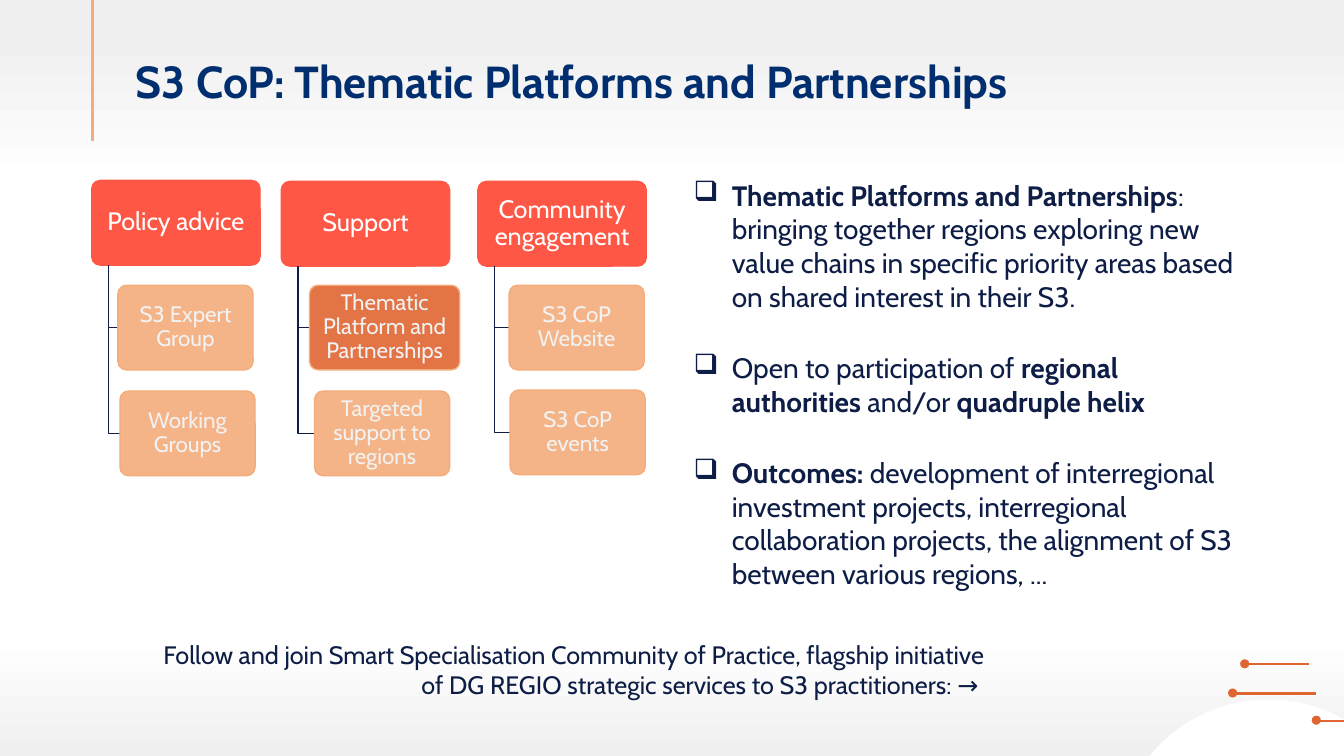
from copy import deepcopy

from lxml import etree
from pptx import Presentation
from pptx import util as u
from pptx.dml.color import RGBColor
from pptx.enum import shapes, text
from pptx.oxml.ns import qn

FONT = "Cabin"
NAVY, TITLE_BLUE, RED = "0D1D46", "002E6E", "FE5745"
PEACH, ORANGE, WHITE, PALE = "F4AC7A", "DF6532", "FFFFFF", "F2F2F2"
BACKGROUND_STOPS = [(5, "F0F0F0"), (24, WHITE), (84, WHITE), (100, "F0F0F0")]
CARD_HEIGHT, HEAD_WIDTH = 0.84, 1.67

# heading, left, top, then cards as (label, left, top, width, fill)
COLUMNS = [
    ("Policy advice", 0.91, 1.79, [
        ("S3 Expert Group", 1.17, 2.83, 1.34, PEACH),
        ("Working Groups", 1.19, 3.88, 1.34, PEACH)]),
    ("Support", 2.79, 1.8, [
        ("Thematic Platform and Partnerships", 3.07, 2.83, 1.49, ORANGE),
        ("Targeted support to regions", 3.12, 3.88, 1.34, PEACH)]),
    ("Community engagement", 4.74, 1.8, [
        ("S3 CoP Website", 5.05, 2.83, 1.34, PEACH),
        ("S3 CoP events", 5.06, 3.87, 1.34, PEACH)]),
]

# each point is a list of (text, bold) runs
POINTS = [
    [("Thematic Platforms and Partnerships", True),
     (": bringing together regions exploring new value chains in specific priority "
      "areas based on shared interest in their S3.", False)],
    [("Open to participation of ", False), ("regional authorities ", True),
     ("and/or ", False), ("quadruple helix", True)],
    [("Outcomes: ", True),
     ("development of interregional investment projects, interregional collaboration "
      "projects, the alignment of S3 between various regions, ...", False)],
]

FOLLOW_LINES = [
    "Follow and join Smart Specialisation Community of Practice, flagship initiative",
    "of DG REGIO strategic services to S3 practitioners: → ",
]


def rgb(value):
    return RGBColor.from_string(value)


def set_attributes(target, **values):
    for name, value in values.items():
        setattr(target, name, value)


def inches(*lengths):
    return [u.Inches(length) for length in lengths]


def add_run(paragraph, words, size, color, bold=False):
    run = paragraph.add_run()
    run.text = words
    set_attributes(run.font, name=FONT, size=u.Pt(size), bold=bold)
    run.font.color.rgb = rgb(color)


def add_text_frame(slide, box, **values):
    frame = slide.shapes.add_textbox(*inches(*box)).text_frame
    set_attributes(frame, word_wrap=True, **values)
    return frame


def next_paragraph(frame, index):
    return frame.add_paragraph() if index else frame.paragraphs[0]


def add_filled(slide, kind, box, fill, line=None):
    shape = slide.shapes.add_shape(kind, *inches(*box))
    shape.shadow.inherit = False
    shape.fill.solid()
    shape.fill.fore_color.rgb = rgb(fill)
    if line:
        shape.line.color.rgb = rgb(line)
        shape.line.width = u.Pt(1)
    else:
        shape.line.fill.background()
    return shape


def add_line(slide, start, end, color, width):
    line = slide.shapes.add_connector(
        shapes.MSO_CONNECTOR.STRAIGHT, *inches(*start, *end))
    line.line.color.rgb = rgb(color)
    line.line.width = u.Pt(width)
    etree.SubElement(line._element.spPr, qn("a:effectLst"))


def paint_background(slide):
    fill = slide.background.fill
    fill.gradient()
    fill.gradient_angle = 270
    stop_list = slide.background._cSld.find(".//" + qn("a:gsLst"))
    while len(stop_list) < len(BACKGROUND_STOPS):
        stop_list.append(deepcopy(stop_list[0]))
    for stop, (position, color) in zip(fill.gradient_stops, BACKGROUND_STOPS):
        stop.color.rgb = rgb(color)
        stop.position = position / 100


def add_decoration(slide):
    """Corner circle, the three pinned lines and the line beside the title."""
    oval = shapes.MSO_SHAPE.OVAL
    add_filled(slide, oval, (11.06, 6.94, 3.04, 3.04), WHITE)
    for left, right, middle in [(12.35, 12.98, 6.59), (12.23, 13.05, 6.88),
                                (13.06, 13.33, 7.15)]:
        add_line(slide, (left, middle), (right, middle), ORANGE, 1.5)
        add_filled(slide, oval, (left - 0.05, middle - 0.05, 0.09, 0.09), ORANGE)
    add_line(slide, (0.92, 0), (0.92, 1.4), PEACH, 2.25)


def add_title(slide, box):
    frame = add_text_frame(slide, box, vertical_anchor=text.MSO_ANCHOR.BOTTOM,
                           margin_bottom=0)
    paragraph = frame.paragraphs[0]
    paragraph.line_spacing = 0.9
    add_run(paragraph, "S3 CoP: Thematic Platforms and Partnerships", 32,
            TITLE_BLUE, True)


def add_card(slide, box, label, size, color, fill, line):
    card = add_filled(slide, shapes.MSO_SHAPE.ROUNDED_RECTANGLE, box, fill, line)
    card.adjustments[0] = 0.1
    frame = card.text_frame
    margin = u.Inches(0.05)
    set_attributes(frame, word_wrap=True, vertical_anchor=text.MSO_ANCHOR.MIDDLE,
                   margin_left=margin, margin_right=margin,
                   margin_top=margin, margin_bottom=margin)
    paragraph = frame.paragraphs[0]
    set_attributes(paragraph, alignment=text.PP_ALIGN.CENTER, line_spacing=0.9)
    add_run(paragraph, label, size, color)
    return card


def add_branch(slide, trunk, top, left, middle):
    """Elbow from the heading's bottom edge to the left side of a card."""
    builder = slide.shapes.build_freeform(*inches(trunk, top))
    builder.add_line_segments(
        [inches(trunk, middle), inches(left, middle)], close=False)
    branch = builder.convert_to_shape()
    branch.shadow.inherit = False
    branch.fill.background()
    branch.line.color.rgb = rgb(NAVY)
    branch.line.width = u.Pt(1)


def add_column(slide, heading, left, top, cards):
    add_card(slide, (left, top, HEAD_WIDTH, CARD_HEIGHT), heading, 18, WHITE, RED, RED)
    for label, card_left, card_top, width, fill in cards:
        add_branch(slide, left + HEAD_WIDTH / 10, top + CARD_HEIGHT,
                   card_left, card_top + CARD_HEIGHT / 2)
        card = add_card(slide, (card_left, card_top, width, CARD_HEIGHT), label, 16,
                        PALE, fill, PEACH)
        color = card._element.spPr.find(qn("a:solidFill"))[0]
        etree.SubElement(color, qn("a:alpha"), val="90000")


def add_points(slide, box):
    frame = add_text_frame(slide, box)
    indent = u.Inches(0.38)
    for index, runs in enumerate(POINTS):
        paragraph = next_paragraph(frame, index)
        properties = paragraph._p.get_or_add_pPr()
        properties.set("marL", str(indent))
        properties.set("indent", str(-indent))
        etree.SubElement(properties, qn("a:buChar"), char="❑")
        if index:
            paragraph.space_before = u.Pt(27)
        for words, bold in runs:
            add_run(paragraph, words, 20, NAVY, bold)


def add_follow_note(slide, box):
    frame = add_text_frame(slide, box)
    for index, words in enumerate(FOLLOW_LINES):
        paragraph = next_paragraph(frame, index)
        paragraph.alignment = text.PP_ALIGN.RIGHT
        add_run(paragraph, words, 18, NAVY)


def main():
    presentation = Presentation()
    set_attributes(presentation, slide_width=u.Inches(13.33),
                   slide_height=u.Inches(7.5))
    slide = presentation.slides.add_slide(presentation.slide_layouts[6])
    paint_background(slide)
    add_decoration(slide)
    add_title(slide, (1.25, 0.21, 12.08, 0.86))
    add_points(slide, (6.78, 1.72, 5.72, 4.2))
    add_follow_note(slide, (1, 6.29, 8.86, 0.75))
    for column in COLUMNS:
        add_column(slide, *column)
    presentation.save("out.pptx")


if __name__ == "__main__":
    main()
